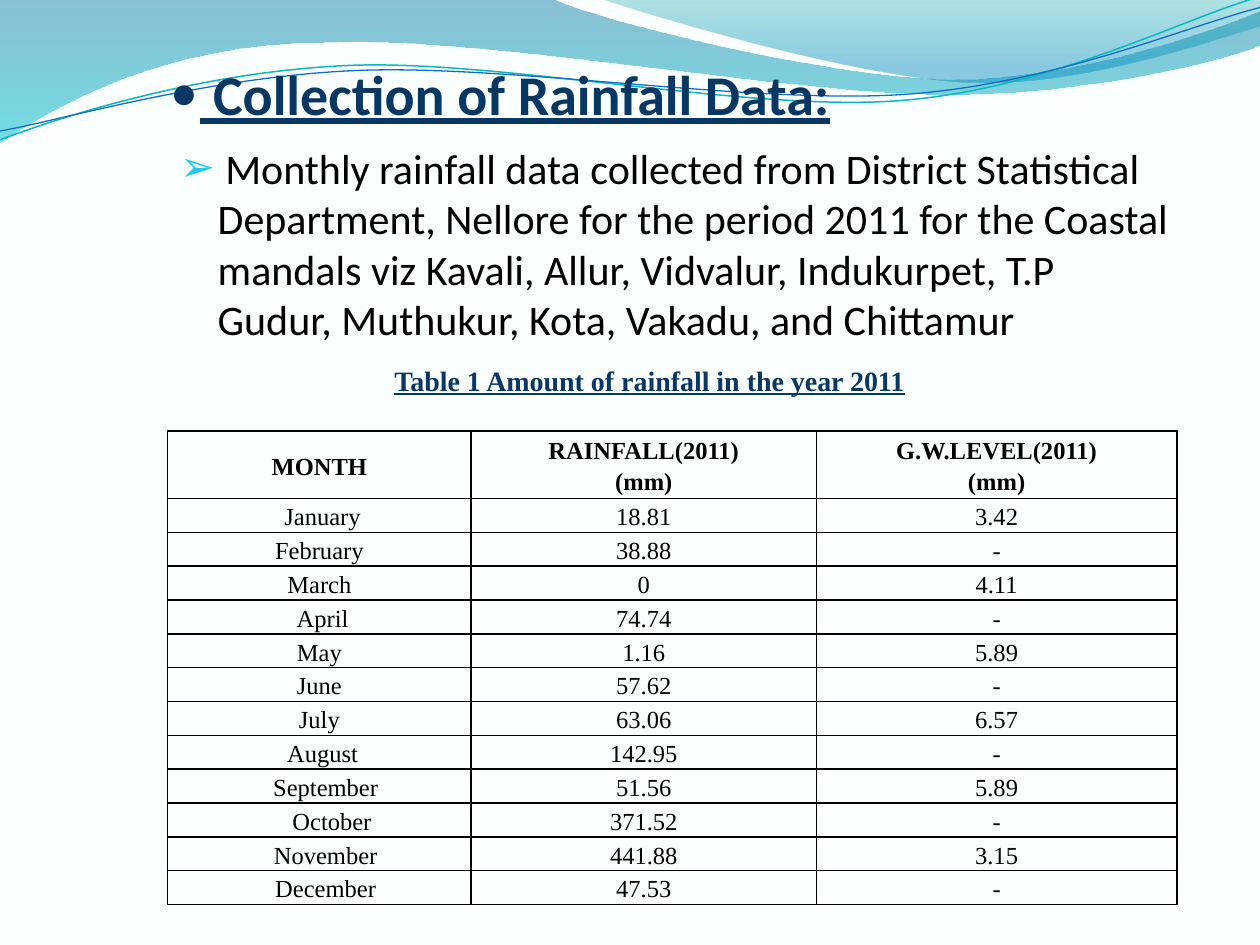
from lxml import etree
from pptx import Presentation
from pptx.dml.color import RGBColor
from pptx.enum.text import MSO_ANCHOR, MSO_AUTO_SIZE, PP_ALIGN
from pptx.oxml.ns import qn
from pptx.util import Inches, Pt

CENTER, LEFT = PP_ALIGN.CENTER, PP_ALIGN.LEFT
TOP, MIDDLE = MSO_ANCHOR.TOP, MSO_ANCHOR.MIDDLE
NO_FIT = MSO_AUTO_SIZE.NONE

BACKGROUND = RGBColor(0xFB, 0xFE, 0xFE)
NAVY = RGBColor(0x08, 0x37, 0x63)
BLACK = RGBColor(0, 0, 0)
SKY = RGBColor(0x20, 0xC9, 0xF8)
DEEP_BLUE = RGBColor(0x00, 0x74, 0xA1)
CYAN = RGBColor(0x00, 0xC6, 0xCF)
TEAL = RGBColor(0x00, 0xA1, 0xA9)
BLUE = RGBColor(0x00, 0x8B, 0xBF)
LINE_TEAL = RGBColor(0x0A, 0xB8, 0xBF)
LINE_BLUE = RGBColor(0x0F, 0x6F, 0xC6)
SANS, SERIF = "Calibri", "Times New Roman"

# Content
TITLE = " Collection of Rainfall Data:"
BODY = [
    "Monthly rainfall data collected from District Statistical",
    "Department, Nellore for the period 2011 for the Coastal",
    "mandals viz Kavali, Allur, Vidvalur, Indukurpet, T.P",
    "Gudur, Muthukur, Kota, Vakadu, and Chittamur",
]
CAPTION = "Table 1 Amount of rainfall in the year 2011"
ROWS = [
    ("MONTH", "RAINFALL(2011)\n(mm)", "G.W.LEVEL(2011)\n(mm)"),
    ("January", "18.81", "3.42"),
    ("February", "38.88", "-"),
    ("March", "0", "4.11"),
    ("April", "74.74", "-"),
    ("May", "1.16", "5.89"),
    ("June", "57.62", "-"),
    ("July", "63.06", "6.57"),
    ("August", "142.95", "-"),
    ("September", "51.56", "5.89"),
    ("October", "371.52", "-"),
    ("November", "441.88", "3.15"),
    ("December", "47.53", "-"),
]
# Extra left margin of some month cells, in inches
MONTH_INSETS = {"January": 0.05, "April": 0.05, "August": 0.05, "September": 0.1,
                "October": 0.2, "November": 0.1, "December": 0.1}
COL_WIDTHS = (2.41, 2.74, 2.86)
HEADER_H, ROW_H, CELL_MARGIN = 0.51, 0.25, 0.07

# Outlines in inches: a pair is a straight step, a triple of pairs is a Bezier curve
WAVES = [
    ([(0, 0), (4.4, 0),
      ((4.76, 0.17), (6.64, 0.63), (7.58, 0.63)),
      ((8.53, 0.63), (9.58, 0.26), (10, 0.09)), (10, 0.36),
      ((9.83, 0.44), (8.7, 0.76), (7.46, 0.75)),
      ((6.22, 0.75), (3.82, 0.28), (2.57, 0.34)),
      ((1.29, 0.35), (0.46, 0.83), (0, 1.13)), (0, 0)],
     [(0, DEEP_BLUE, 45), (1, CYAN, 55)]),
    ([(4.79, 0),
      ((5.09, 0.11), (6.82, 0.62), (7.69, 0.65)),
      ((8.56, 0.69), (9.61, 0.32), (10, 0.21)), (10, 0), (4.79, 0)],
     [(0, TEAL, 30), (0.8, BLUE, 45)]),
]
RIPPLES = [
    ([(0, 1.11),
      ((0.48, 0.93), (1.58, 0.57), (2.77, 0.52)),
      ((3.95, 0.47), (5.93, 0.89), (7.13, 0.8)),
      ((8.33, 0.71), (9.38, 0.15), (9.98, -0.02))], LINE_TEAL, 0.85),
    ([(0, 1.04),
      ((0.47, 0.96), (1.64, 0.61), (2.83, 0.56)),
      ((4.03, 0.51), (5.97, 0.83), (7.17, 0.75)),
      ((8.36, 0.67), (9.41, 0.21), (10, 0.06))], LINE_BLUE, 0.75),
]


def add_outline(shapes, steps, close):
    ends = [step if len(step) == 2 else step[-1] for step in steps]
    points = [(Inches(x), Inches(y)) for x, y in ends]
    builder = shapes.build_freeform(*points[0])
    builder.add_line_segments(points[1:], close=close)
    sp = builder.convert_to_shape()
    sp.shadow.inherit = False
    # Turn the segments that have control points into curves
    segments = list(sp._element.iter(qn("a:lnTo")))
    for segment, step in zip(segments, steps[1:]):
        if len(step) == 3:
            curve = etree.Element(qn("a:cubicBezTo"))
            for x, y in step:
                etree.SubElement(curve, qn("a:pt"), x=str(Inches(x) - sp.left),
                                 y=str(Inches(y) - sp.top))
            segment.getparent().replace(segment, curve)
    return sp


def style(p, font, size, color, align=LEFT, bold=False, underline=False):
    p.alignment = align
    for r in p.runs:
        f = r.font
        f.name, f.size, f.bold, f.underline = font, Pt(size), bold, underline
        f.color.rgb = color


def set_indent(p, margin, bullet=None, color=None):
    pPr = p._p.get_or_add_pPr()
    pPr.set("marL", str(Inches(margin)))
    pPr.set("indent", str(-Inches(margin) if bullet else 0))
    if not bullet:
        etree.SubElement(pPr, qn("a:buNone"))
        return
    clr = etree.SubElement(pPr, qn("a:buClr"))
    etree.SubElement(clr, qn("a:srgbClr"), val=str(color))
    etree.SubElement(pPr, qn("a:buFont"), typeface=SANS)
    etree.SubElement(pPr, qn("a:buChar"), char=bullet)


def add_borders(cell):
    tcPr = cell._tc.get_or_add_tcPr()
    for side in ("lnL", "lnR", "lnT", "lnB"):
        ln = etree.SubElement(tcPr, qn(f"a:{side}"), w=str(Pt(1)))
        fill = etree.SubElement(ln, qn("a:solidFill"))
        etree.SubElement(fill, qn("a:srgbClr"), val=str(BLACK))


def main():
    prs = Presentation()
    prs.slide_width, prs.slide_height = Inches(10), Inches(7.5)
    s = prs.slides.add_slide(prs.slide_layouts[5])
    s.background.fill.solid()
    s.background.fill.fore_color.rgb = BACKGROUND

    # Waves along the top
    for steps, stops in WAVES:
        sp = add_outline(s.shapes, steps, True)
        sp.line.fill.background()
        sp.fill.gradient()
        sp.fill.gradient_angle = 270
        for stop, (position, color, opacity) in zip(sp.fill.gradient_stops, stops):
            stop.position = position
            stop.color.rgb = color
            clr = stop._gs.find(qn("a:srgbClr"))
            etree.SubElement(clr, qn("a:alpha"), val=str(opacity * 1000))
    for steps, color, width in RIPPLES:
        sp = add_outline(s.shapes, steps, False)
        sp.fill.background()
        sp.line.color.rgb = color
        sp.line.width = Pt(width)

    # Title, in front of the waves
    title = s.shapes.title
    s.shapes._spTree.append(title._element)
    title.left, title.top, title.width, title.height = map(Inches, (1.25, 0.42, 8.08, 0.64))
    tf = title.text_frame
    tf.text = TITLE
    tf.auto_size, tf.vertical_anchor = NO_FIT, TOP
    style(tf.paragraphs[0], SANS, 32, NAVY, bold=True, underline=True)
    set_indent(tf.paragraphs[0], 0.24, "•", NAVY)

    # Body text
    tf = s.shapes.add_textbox(*map(Inches, (1.33, 1.08, 8.17, 1.72))).text_frame
    tf.word_wrap = True
    tf.text = "\n".join(BODY)
    for i, p in enumerate(tf.paragraphs):
        style(p, SANS, 24, BLACK)
        if i == 0:
            set_indent(p, 0.36, "➢", SKY)
        else:
            set_indent(p, 0.3)

    # Rainfall table
    height = HEADER_H + ROW_H * (len(ROWS) - 1)
    table = s.shapes.add_table(len(ROWS), len(COL_WIDTHS), Inches(1.33), Inches(3.42),
                               Inches(sum(COL_WIDTHS)), Inches(height)).table
    for column, width in zip(table.columns, COL_WIDTHS):
        column.width = Inches(width)
    for i, values in enumerate(ROWS):
        table.rows[i].height = Inches(ROW_H if i else HEADER_H)
        for j, value in enumerate(values):
            cell = table.cell(i, j)
            cell.text = value
            cell.vertical_anchor = MIDDLE
            cell.margin_left = Inches(CELL_MARGIN + MONTH_INSETS.get(value, 0))
            cell.margin_right = Inches(CELL_MARGIN)
            cell.margin_top = cell.margin_bottom = 0
            add_borders(cell)
            cell.fill.background()
            for p in cell.text_frame.paragraphs:
                style(p, SERIF, 14, BLACK, CENTER, bold=i == 0)
                p.line_spacing = 1.15

    # Table caption
    tf = s.shapes.add_textbox(*map(Inches, (3, 2.83, 4.31, 0.37))).text_frame
    tf.word_wrap = False
    tf.vertical_anchor = MIDDLE
    tf.text = CAPTION
    style(tf.paragraphs[0], SERIF, 16, NAVY, CENTER, bold=True, underline=True)

    prs.save("out.pptx")


if __name__ == "__main__":
    main()
